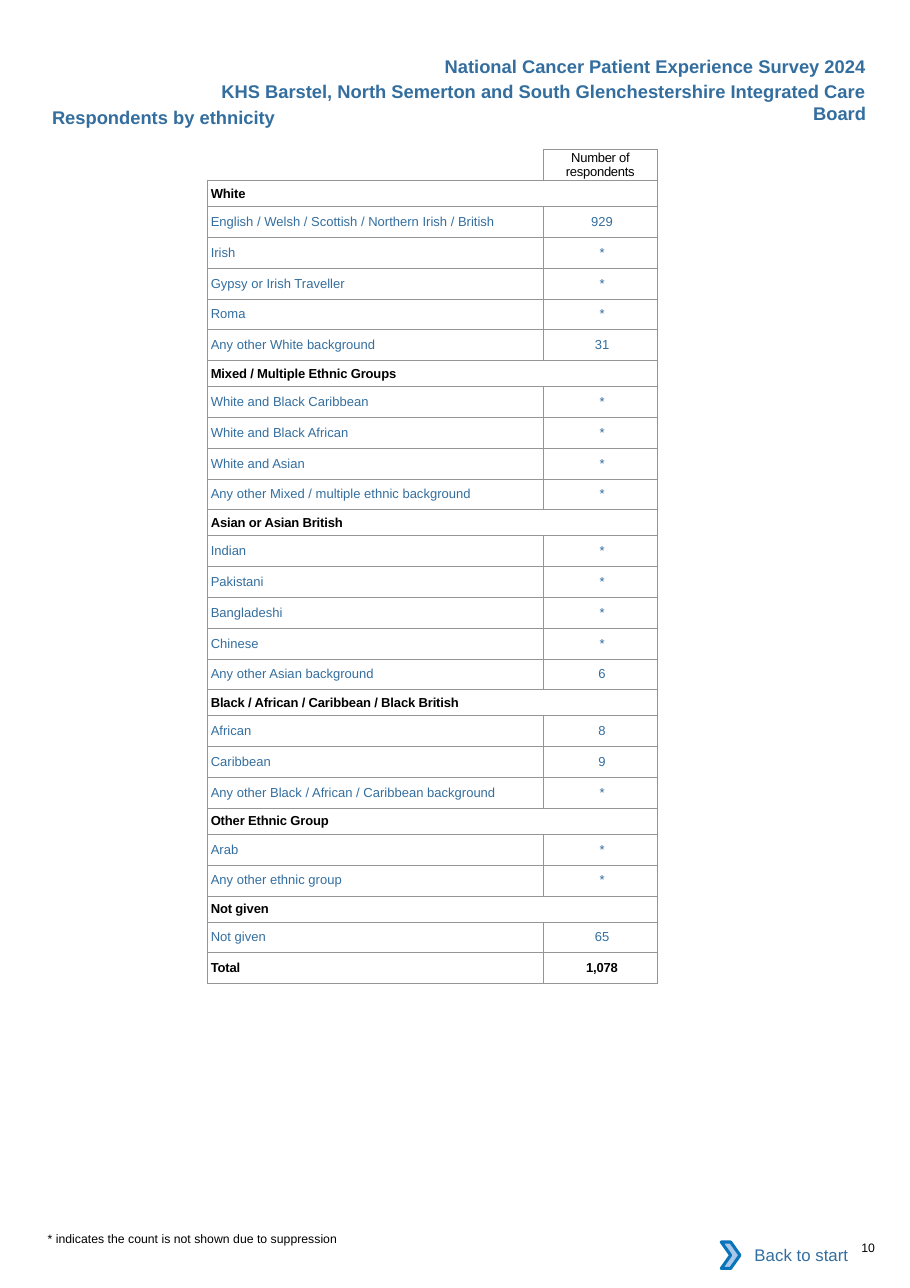
"""Builds the page that lists survey respondents by ethnicity."""
from lxml import etree
from pptx import Presentation
from pptx import util as u
from pptx.dml.color import RGBColor
from pptx.enum import shapes, text
from pptx.oxml import ns

BLUE = RGBColor(0x33, 0x6E, 0x9F)
BLACK = RGBColor(0, 0, 0)
WHITE = RGBColor(0xFF, 0xFF, 0xFF)
CHEVRON_FILL = RGBColor(0xA8, 0xC7, 0xE9)
CHEVRON_LINE = RGBColor(0x0A, 0x74, 0xBB)
BORDER = RGBColor(0x93, 0x95, 0x98)
LEFT, CENTER, RIGHT = text.PP_ALIGN.LEFT, text.PP_ALIGN.CENTER, text.PP_ALIGN.RIGHT

GROUPS = {
    "White": [
        ("English / Welsh / Scottish / Northern Irish / British", "929"),
        ("Irish", "*"),
        ("Gypsy or Irish Traveller", "*"),
        ("Roma", "*"),
        ("Any other White background", "31"),
    ],
    "Mixed / Multiple Ethnic Groups": [
        ("White and Black Caribbean", "*"),
        ("White and Black African", "*"),
        ("White and Asian", "*"),
        ("Any other Mixed / multiple ethnic background", "*"),
    ],
    "Asian or Asian British": [
        ("Indian", "*"),
        ("Pakistani", "*"),
        ("Bangladeshi", "*"),
        ("Chinese", "*"),
        ("Any other Asian background", "6"),
    ],
    "Black / African / Caribbean / Black British": [
        ("African", "8"),
        ("Caribbean", "9"),
        ("Any other Black / African / Caribbean background", "*"),
    ],
    "Other Ethnic Group": [
        ("Arab", "*"),
        ("Any other ethnic group", "*"),
    ],
    "Not given": [("Not given", "65")],
}
COUNT_HEADING = "Number of respondents"
TOTAL = ("Total", "1,078")

HEADING = dict(size=12, color=BLUE, bold=True)
SMALL = dict(size=8, color=BLACK)
TEXT_BOXES = [
    ("10", (19.86, 28.6, 1, 0.33), 0, SMALL),
    ("Respondents by ethnicity", (1.2, 2.45, 6, 0.51), 0, HEADING),
    ("* indicates the count is not shown due to suppression", (1.1, 28.39, 8, 0.33), 0, SMALL),
    ("KHS Barstel, North Semerton and South Glenchestershire Integrated Care Board",
     (4.57, 1.72, 15.65, 1.27), 1, dict(HEADING, align=RIGHT)),
    ("National Cancer Patient Experience Survey 2024",
     (4.57, 1.15, 15.65, 0.76), 1, dict(HEADING, align=RIGHT)),
]

TABLE_LEFT, TABLE_TOP = 4.78, 3.44
COLUMN_WIDTHS = (7.75, 2.62)
ROW_HEIGHT, GROUP_HEIGHT = 0.71, 0.6


def write(frame, words, size=8.5, color=BLUE, bold=False, align=LEFT, spacing=0):
    paragraph = frame.paragraphs[0]
    paragraph.alignment = align
    if not words:
        etree.SubElement(paragraph._p, ns.qn("a:endParaRPr"), sz=str(int(size * 100)))
        return
    run = paragraph.add_run()
    run.text = words
    run.font.name = "Arial"
    run.font.size = u.Pt(size)
    run.font.bold = bold
    run.font.color.rgb = color
    if spacing:
        run.font._element.set("spc", str(spacing))


def add_borders(cell, sides):
    properties = cell._tc.get_or_add_tcPr()
    for position, side in enumerate("LRTB"):
        line = etree.Element(ns.qn(f"a:ln{side}"), w=str(u.Pt(0.5)))
        if side in sides:
            fill = etree.SubElement(line, ns.qn("a:solidFill"))
            etree.SubElement(fill, ns.qn("a:srgbClr"), val=str(BORDER))
        else:
            etree.SubElement(line, ns.qn("a:noFill"))
        properties.insert(position, line)


def add_text_box(slide, words, place, inset, style):
    frame = slide.shapes.add_textbox(*map(u.Cm, place)).text_frame
    frame.word_wrap = True
    frame.margin_left = frame.margin_right = u.Cm(0.25 * inset)
    frame.margin_top = frame.margin_bottom = u.Cm(0.13 * inset)
    write(frame, words, **style)


def add_respondents(slide):
    group_style = dict(color=BLACK, bold=True, spacing=-10)
    rows = [(("", COUNT_HEADING), dict(color=BLACK, spacing=-20))]
    for group, members in GROUPS.items():
        rows.append(((group,), group_style))
        rows += [(member, {}) for member in members]
    rows.append((TOTAL, group_style))
    heights = [u.Cm(ROW_HEIGHT if len(words) == 2 else GROUP_HEIGHT) for words, _ in rows]

    table = slide.shapes.add_table(
        len(rows), 2, u.Cm(TABLE_LEFT), u.Cm(TABLE_TOP),
        u.Cm(sum(COLUMN_WIDTHS)), sum(heights)).table
    table.first_row = table.horz_banding = False
    for column, width in zip(table.columns, COLUMN_WIDTHS):
        column.width = u.Cm(width)
    for index, (words, style) in enumerate(rows):
        table.rows[index].height = heights[index]
        for column in range(2):
            cell = table.cell(index, column)
            cell.margin_left = u.Cm(0.08 if index else 0)
            cell.margin_right = cell.margin_top = cell.margin_bottom = 0
            cell.vertical_anchor = text.MSO_ANCHOR.MIDDLE
            cell.fill.background()
            add_borders(cell, "LRTB" if index or column else "RB")
            if column < len(words):
                write(cell.text_frame, words[column], align=CENTER if column else LEFT, **style)
        if len(words) == 1:
            table.cell(index, 0).merge(table.cell(index, 1))


def add_back_button(slide):
    group = slide.shapes.add_group_shape()
    button = group.shapes.add_shape(
        shapes.MSO_SHAPE.RECTANGLE, u.Cm(16.81), u.Cm(28.4), u.Cm(3), u.Cm(1.07))
    button.fill.solid()
    button.fill.fore_color.rgb = WHITE
    button.line.fill.background()
    button.text_frame.word_wrap = True
    button.text_frame.vertical_anchor = text.MSO_ANCHOR.MIDDLE
    write(button.text_frame, "Back to start", size=11, align=RIGHT)
    chevron = group.shapes.add_shape(
        shapes.MSO_SHAPE.CHEVRON, u.Cm(16.63), u.Cm(28.63), u.Cm(0.43), u.Cm(0.61))
    chevron.fill.solid()
    chevron.fill.fore_color.rgb = CHEVRON_FILL
    chevron.line.color.rgb = CHEVRON_LINE
    chevron.line.width = u.Pt(2)
    for shape in (button, chevron):
        shape.shadow.inherit = False


def main():
    presentation = Presentation()
    presentation.slide_width, presentation.slide_height = u.Cm(20.98), u.Cm(29.69)
    slide = presentation.slides.add_slide(presentation.slide_layouts[6])
    for box in TEXT_BOXES:
        add_text_box(slide, *box)
    add_respondents(slide)
    add_back_button(slide)
    presentation.save("out.pptx")


if __name__ == "__main__":
    main()
